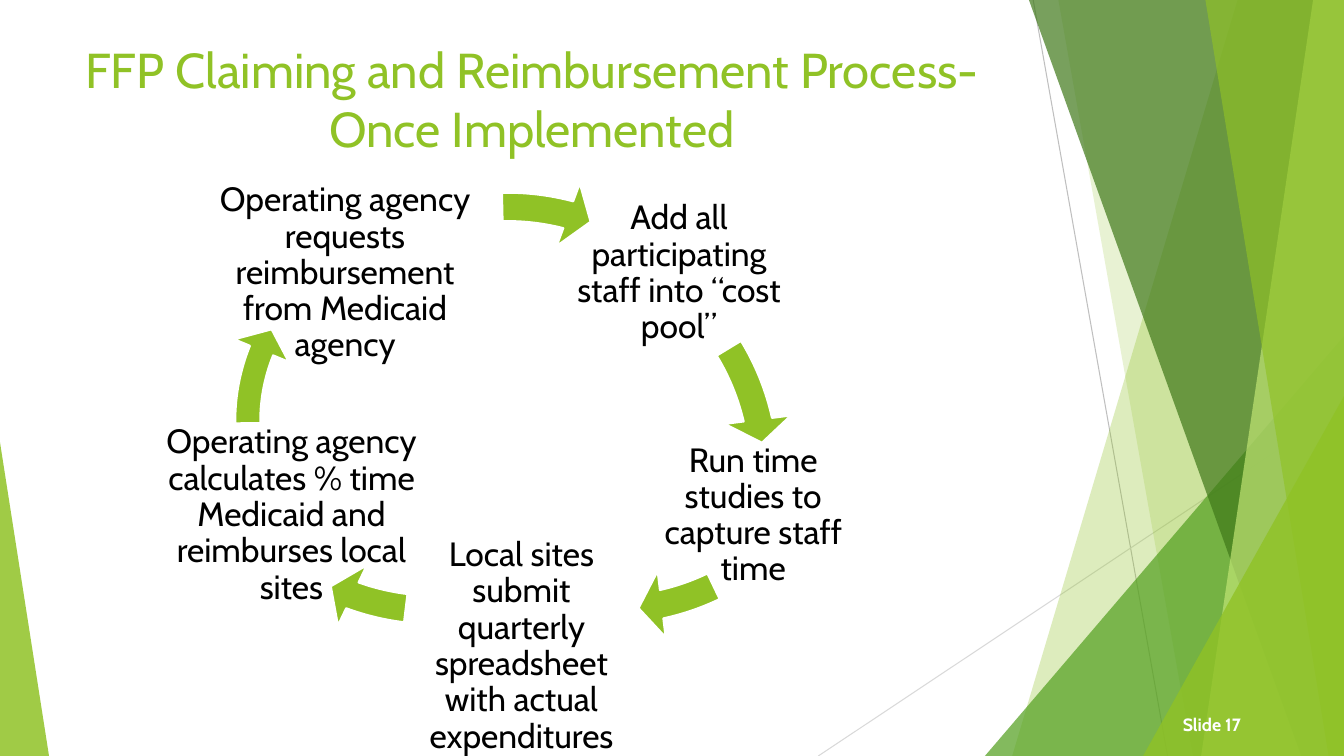
from dataclasses import dataclass

from lxml import etree
from pptx import Presentation
from pptx.dml.color import RGBColor
from pptx.enum import shapes, text
from pptx.oxml import ns
from pptx.util import Pt


@dataclass(frozen=True)
class Theme:
    font: str = "Cabin"
    lime: str = "90C226"
    green: str = "54A021"
    dark_green: str = "3F7819"
    pale_green: str = "C0E474"
    black: str = "000000"
    white: str = "FFFFFF"
    grey: str = "BFBFBF"
    light_grey: str = "D9D9D9"
    title_size: float = 35
    step_size: float = 24
    number_size: float = 12.7


theme = Theme()
WIDTH, HEIGHT = 960, 540

presentation = Presentation()
presentation.slide_width, presentation.slide_height = Pt(WIDTH), Pt(HEIGHT)
slide = presentation.slides.add_slide(presentation.slide_layouts[6])


def fill_shape(shape, color, opacity=100):
    """Give a shape a flat fill of the given opacity, without line or shadow."""
    shape.shadow.inherit = False
    shape.line.fill.background()
    shape.fill.solid()
    shape.fill.fore_color.rgb = RGBColor.from_string(color)
    if opacity < 100:
        color_element = shape.fill._xPr.find(".//" + ns.qn("a:srgbClr"))
        etree.SubElement(color_element, ns.qn("a:alpha"), val=str(opacity * 1000))


def add_label(box, wording, size, color, align, margins=(7.2, 3.6), bold=False):
    """Add a wrapped one-paragraph text box; margins are (sides, top and bottom)."""
    label = slide.shapes.add_textbox(*map(Pt, box))
    frame = label.text_frame
    frame.word_wrap = True
    frame.margin_left = frame.margin_right = Pt(margins[0])
    frame.margin_top = frame.margin_bottom = Pt(margins[1])
    frame.text = wording
    paragraph = frame.paragraphs[0]
    paragraph.alignment = align
    font = paragraph.runs[0].font
    font.name, font.size, font.bold = theme.font, Pt(size), bold
    font.color.rgb = RGBColor.from_string(color)
    return frame


# Background lines
for start_x, start_y, end_x, color in [
    (738, 0, 834, theme.grey),
    (WIDTH, 290, 584.5, theme.light_grey),
]:
    line = slide.shapes.add_connector(
        shapes.MSO_CONNECTOR.STRAIGHT, Pt(start_x), Pt(start_y), Pt(end_x), Pt(HEIGHT)
    )
    line.line.color.rgb = RGBColor.from_string(color)
    line.line.width = Pt(0.75)
    etree.SubElement(line._element.spPr, ns.qn("a:effectLst"))

# Background facets: ribbons are (top x, bottom x) and reach the right edge,
# triangles are (left, top, width, apex position) and reach the bottom edge
for geometry, color, opacity in [
    ((884, 723), theme.lime, 30),
    ((756, 852), theme.lime, 20),
    ((703.5, 240, 256.5, 1), theme.green, 72),
    ((735, 929.5), theme.dark_green, 70),
    ((938, 858), theme.pale_green, 70),
    ((861, 949), theme.lime, 65),
    ((816.5, 283, 143.5, 1), theme.lime, 80),
    ((0, 316, 35, 0), theme.lime, 85),
]:
    if len(geometry) == 2:
        top_x, bottom_x = geometry
        builder = slide.shapes.build_freeform(Pt(top_x), 0)
        corners = [(WIDTH, 0), (WIDTH, HEIGHT), (bottom_x, HEIGHT)]
        builder.add_line_segments([(Pt(x), Pt(y)) for x, y in corners])
        facet = builder.convert_to_shape()
    else:
        left, top, width, apex = geometry
        facet = slide.shapes.add_shape(
            shapes.MSO_SHAPE.ISOSCELES_TRIANGLE,
            Pt(left), Pt(top), Pt(width), Pt(HEIGHT - top),
        )
        facet.adjustments[0] = apex
    fill_shape(facet, color, opacity)

add_label(
    (41.5, 24.5, 677, 71.5), "FFP Claiming and Reimbursement Process- Once Implemented",
    theme.title_size, theme.lime, text.PP_ALIGN.CENTER,
)

# Cycle: each step's box (left, top, width), then the arrow leaving it:
# box (left, top, height), head and tail angles
STEP_HEIGHT, ARROW_WIDTH = 104.5, 391
for wording, (left, top, width), (arrow_left, arrow_top, arrow_height), angles in [
    ("Add all participating staff into “cost pool”",
     (406, 143, 158), (178.5, 142.5, 391), (208.284, 197.21)),
    ("Run time studies to capture staff time",
     (461, 316, 154), (240, 68.5, 391), (46.501, 38.632)),
    ("Local sites submit quarterly spreadsheet with actual expenditures",
     (289.5, 409.5, 166), (115, 68.5, 391), (66.01, 58.142)),
    ("Operating agency calculates % time Medicaid and reimburses local sites",
     (106, 316, 204.5), (156, 128, 345), (118.153, 107.644)),
    ("Operating agency requests reimbursement from Medicaid agency",
     (148.5, 143, 196), (167, 124, 391), (170.792, 161.26)),
]:
    step = add_label(
        (left, top, width, STEP_HEIGHT), wording,
        theme.step_size, theme.black, text.PP_ALIGN.CENTER, (2.4, 2.4),
    )
    step.vertical_anchor = text.MSO_ANCHOR.MIDDLE
    step.paragraphs[0].line_spacing = 0.9

    arrow = slide.shapes.add_shape(
        shapes.MSO_SHAPE.CIRCULAR_ARROW,
        Pt(arrow_left), Pt(arrow_top), Pt(ARROW_WIDTH), Pt(arrow_height),
    )
    for index, value in enumerate((0.052, 3.358, *angles, 0.061)):
        arrow.adjustments[index] = value
    fill_shape(arrow, theme.lime)
    arrow.line.color.rgb = RGBColor.from_string(theme.white)
    arrow.line.width = Pt(1.5)

add_label(
    (755.5, 506, 138, 22), "Slide 17",
    theme.number_size, theme.white, text.PP_ALIGN.RIGHT, bold=True,
)

presentation.save("out.pptx")
